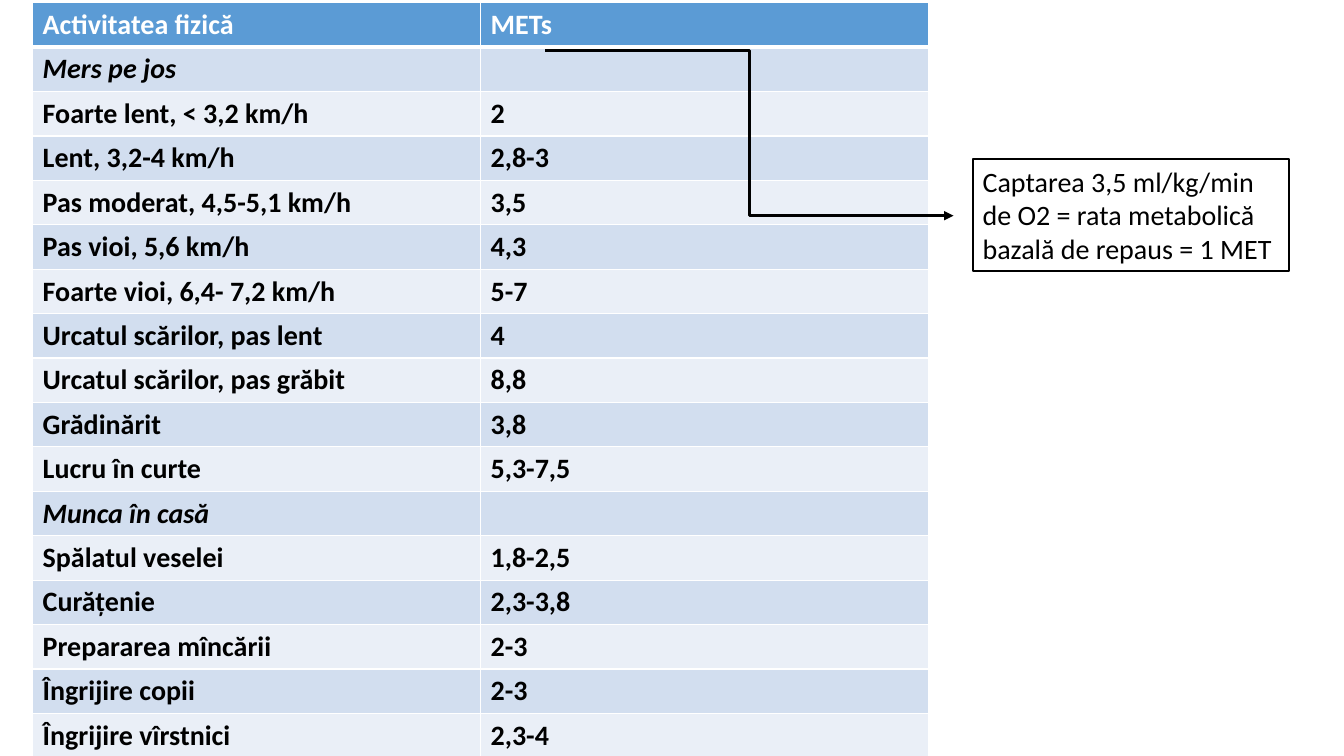
"""Build a slide with a table of MET values by activity and a note that defines one MET."""
from pptx import Presentation
from pptx.dml.color import RGBColor as Rgb
from pptx.enum.shapes import MSO_CONNECTOR as Link, MSO_SHAPE as Kind
from pptx.enum.text import MSO_AUTO_SIZE as Fit, MSO_ANCHOR as Anchor, PP_ALIGN as Align
from pptx.oxml.ns import qn
from pptx.util import Pt
from lxml.etree import SubElement as Sub

HEAD = ("Activitatea fizică", "METs")
GROUPS = {
    "Mers pe jos": [
        ("Foarte lent, < 3,2 km/h", "2"),
        ("Lent, 3,2-4 km/h", "2,8-3"),
        ("Pas moderat, 4,5-5,1 km/h", "3,5"),
        ("Pas vioi, 5,6 km/h", "4,3"),
        ("Foarte vioi, 6,4- 7,2 km/h", "5-7"),
        ("Urcatul scărilor, pas lent", "4"),
        ("Urcatul scărilor, pas grăbit", "8,8"),
        ("Grădinărit", "3,8"),
        ("Lucru în curte", "5,3-7,5"),
    ],
    "Munca în casă": [
        ("Spălatul veselei", "1,8-2,5"),
        ("Curățenie", "2,3-3,8"),
        ("Prepararea mîncării", "2-3"),
        ("Îngrijire copii", "2-3"),
        ("Îngrijire vîrstnici", "2,3-4"),
    ],
}
NOTE = "Captarea 3,5 ml/kg/min de O2 = rata metabolică bazală de repaus = 1 MET"

THEME = {
    "font": "Calibri", "size": 20, "ink": "000000", "pale": "FFFFFF",
    "head": "5B9BD5", "bands": ("EAEFF7", "D2DEEF"),
    "thin": 1, "thick": 3, "frame": 1.5, "arrow": 2.25,
}
PAGE = (960, 540)
GRID = {"left": 23.3, "top": 2, "col": 320, "row": 29.5}
BOX = (694.8, 113.8, 226.1, 79.9)
ARROW = (389.5, 36, 681.1, 154.1)


def style(font, color, **more):
    """Apply the theme font with a colour and any further values."""
    font.color.rgb = Rgb.from_string(color)
    look = {"name": THEME["font"], "size": Pt(THEME["size"]), **more}
    for key, val in look.items():
        setattr(font, key, val)


def edge(cell, side, width):
    """Draw one border of a cell."""
    line = Sub(cell._tc.get_or_add_tcPr(), qn(f"a:ln{side}"), w=str(Pt(width)))
    Sub(Sub(line, qn("a:solidFill")), qn("a:srgbClr"), val=THEME["pale"])


def draw_grid(slide):
    """Add the table of activities."""
    rows = [HEAD]
    for name, items in GROUPS.items():
        rows += [(name, ""), *items]
    size = (GRID["left"], GRID["top"], GRID["col"] * len(HEAD), GRID["row"] * len(rows))
    table = slide.shapes.add_table(len(rows), len(HEAD), *map(Pt, size)).table
    table.first_row = table.horz_banding = False
    for col in table.columns:
        col.width = Pt(GRID["col"])
    for r, row in enumerate(rows):
        table.rows[r].height = Pt(GRID["row"])
        for c, text in enumerate(row):
            cell = table.cell(r, c)
            for side in "LRTB":
                mid = (r, side) in ((0, "B"), (1, "T"))
                edge(cell, side, THEME["thick" if mid else "thin"])
            cell.fill.solid()
            fill = THEME["bands"][r % 2] if r else THEME["head"]
            cell.fill.fore_color.rgb = Rgb.from_string(fill)
            cell.text = text
            ink = THEME["ink" if r else "pale"]
            style(cell.text_frame.paragraphs[0].font, ink, bold=True, italic=row[0] in GROUPS)
            for run in cell.text_frame.paragraphs[0].runs:
                style(run.font, ink, bold=True, italic=row[0] in GROUPS)


def draw_note(slide):
    """Add the framed note."""
    box = slide.shapes.add_shape(Kind.RECTANGLE, *map(Pt, BOX))
    box.shadow.inherit = False
    box.fill.background()
    box.line.color.rgb = Rgb.from_string(THEME["ink"])
    box.line.width = Pt(THEME["frame"])
    frame = box.text_frame
    frame.text = NOTE
    look = {"word_wrap": True, "auto_size": Fit.SHAPE_TO_FIT_TEXT, "vertical_anchor": Anchor.TOP}
    for key, val in look.items():
        setattr(frame, key, val)
    para = frame.paragraphs[0]
    para.alignment = Align.LEFT
    style(para.runs[0].font, THEME["ink"])


def draw_arrow(slide):
    """Add the bent arrow from the header to the note."""
    link = slide.shapes.add_connector(Link.ELBOW, *map(Pt, ARROW))
    link.line.color.rgb = Rgb.from_string(THEME["ink"])
    link.line.width = Pt(THEME["arrow"])
    Sub(link.line._get_or_add_ln(), qn("a:tailEnd"), type="triangle")
    Sub(link._element.spPr, qn("a:effectLst"))


def main():
    """Build and save the slide."""
    deck = Presentation()
    deck.slide_width, deck.slide_height = map(Pt, PAGE)
    slide = deck.slides.add_slide(deck.slide_layouts[6])
    for draw in (draw_grid, draw_note, draw_arrow):
        draw(slide)
    deck.save("out.pptx")


if __name__ == "__main__":
    main()
